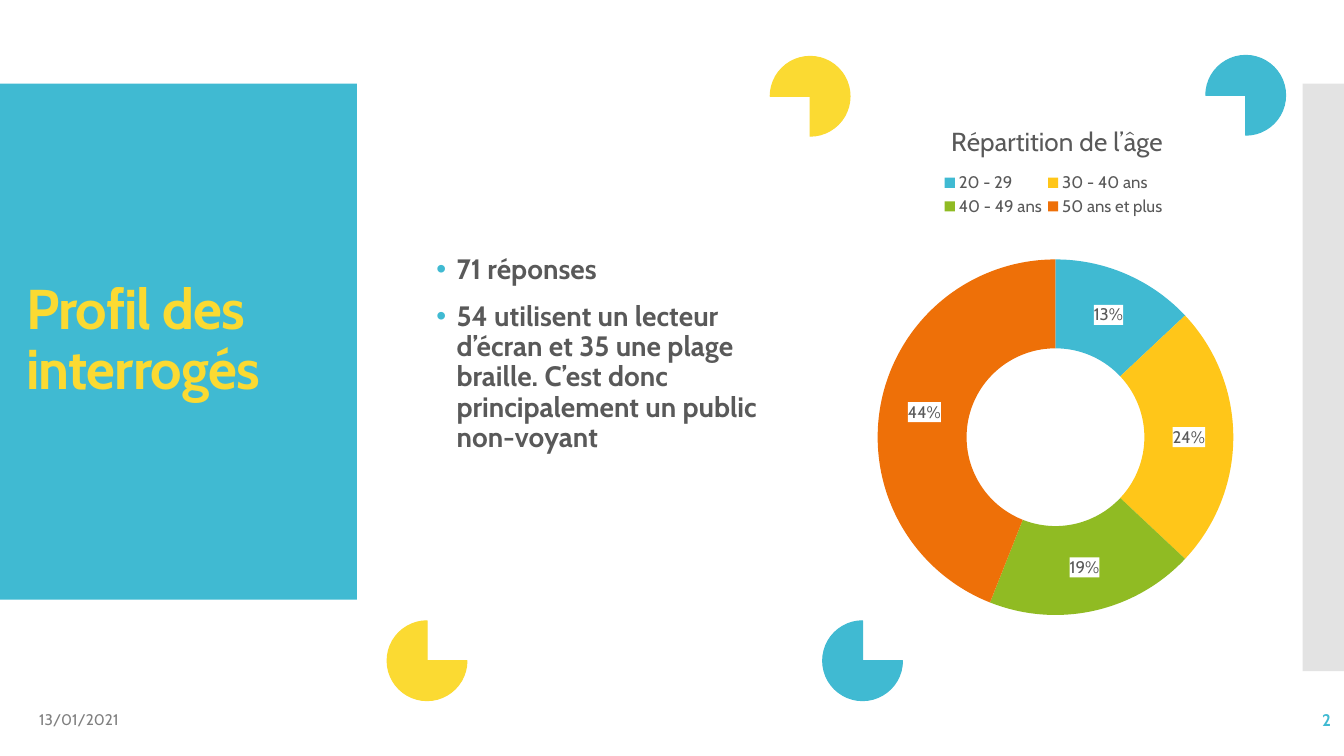
from lxml import etree
from pptx import Presentation
from pptx.chart.data import CategoryChartData
from pptx.dml.color import RGBColor
from pptx.enum.chart import XL_CHART_TYPE, XL_LEGEND_POSITION
from pptx.enum.shapes import MSO_SHAPE
from pptx.enum.text import MSO_ANCHOR, PP_ALIGN
from pptx.oxml import parse_xml
from pptx.oxml.ns import nsdecls, qn
from pptx.util import Inches, Pt

RECT = MSO_SHAPE.RECTANGLE
PIE = MSO_SHAPE.PIE
DOUGHNUT = XL_CHART_TYPE.DOUGHNUT
LEGEND_TOP = XL_LEGEND_POSITION.TOP
MIDDLE = MSO_ANCHOR.MIDDLE
LEFT = PP_ALIGN.LEFT
RIGHT = PP_ALIGN.RIGHT

FONT = "Cabin"
BLUE = "40BAD2"
YELLOW = "FBDA32"
GREY = "595959"
AGES = [
    ("20 - 29", 13, BLUE),
    ("30 - 40 ans", 24, "FFC619"),
    ("40 - 49 ans", 19, "90BB23"),
    ("50 ans et plus", 44, "EE7008"),
]


def rgb(value):
    return RGBColor.from_string(value)


def set_font(font, size, color, bold=False):
    font.name = FONT
    font.size = Pt(size)
    font.bold = bold
    font.color.rgb = rgb(color)


def add_block(s, kind, box, color, alpha=None):
    sp = s.shapes.add_shape(kind, *map(Inches, box))
    sp.shadow.inherit = False
    sp.fill.solid()
    sp.fill.fore_color.rgb = rgb(color)
    sp.line.fill.background()
    if alpha:
        clr = sp.fill._xPr.find(".//" + qn("a:srgbClr"))
        etree.SubElement(clr, qn("a:alpha")).set("val", str(alpha * 1000))
    return sp


def add_pie(s, x, y, color, rotation):
    sp = add_block(s, PIE, (x, y, 0.79, 0.79), color)
    sp.rotation = rotation
    sp.line.color.rgb = rgb(color)
    sp.line.width = Pt(0.85)


def add_text_frame(s, box):
    tf = s.shapes.add_textbox(*map(Inches, box)).text_frame
    tf.word_wrap = True
    tf.vertical_anchor = MIDDLE
    return tf


def add_run(p, text, size, color, bold=False):
    r = p.add_run()
    r.text = text
    set_font(r.font, size, color, bold)
    return r


def add_label(s, box, text, size, color, bold=False, align=LEFT):
    p = add_text_frame(s, box).paragraphs[0]
    p.alignment = align
    p.line_spacing = 0.9
    return add_run(p, text, size, color, bold)


def add_bullets(s, box, items):
    tf = add_text_frame(s, box)
    tf.margin_bottom = Inches(0.52)
    for i, text in enumerate(items):
        p = tf.add_paragraph() if i else tf.paragraphs[0]
        p.line_spacing = 0.9
        p.space_before = Pt(12)
        pPr = p._p.get_or_add_pPr()
        pPr.set("marL", str(Inches(0.2)))
        pPr.set("indent", str(-Inches(0.2)))
        clr = etree.SubElement(pPr, qn("a:buClr"))
        etree.SubElement(clr, qn("a:srgbClr")).set("val", BLUE)
        etree.SubElement(pPr, qn("a:buFont")).set("typeface", "Arial")
        etree.SubElement(pPr, qn("a:buChar")).set("char", "•")
        add_run(p, text, 20, GREY, True)


def set_layout(el, index, **values):
    for old in el.findall(qn("c:layout")):
        el.remove(old)
    layout = etree.Element(qn("c:layout"))
    manual = etree.SubElement(layout, qn("c:manualLayout"))
    if el.tag == qn("c:plotArea"):
        etree.SubElement(manual, qn("c:layoutTarget")).set("val", "inner")
    for axis in "xy":
        etree.SubElement(manual, qn(f"c:{axis}Mode")).set("val", "edge")
    for key, value in values.items():
        etree.SubElement(manual, qn(f"c:{key}")).set("val", str(value))
    el.insert(index, layout)


def add_age_chart(s, box):
    data = CategoryChartData()
    data.categories = [name for name, _, _ in AGES]
    data.add_series("Series 1", [value for _, value, _ in AGES])
    chart = s.shapes.add_chart(DOUGHNUT, *map(Inches, box), data).chart
    set_font(chart.font, 12, GREY)

    chart.has_title = True
    p = chart.chart_title.text_frame.paragraphs[0]
    add_run(p, "Répartition de l’âge", 18.6, GREY)
    set_layout(chart.chart_title._element, 1, x=0.22, y=0.04)

    chart.has_legend = True
    legend = chart.legend
    legend.position = LEGEND_TOP
    legend.include_in_layout = False
    set_font(legend.font, 12, GREY)
    set_layout(legend._element, 1, x=0.2, y=0.13, w=0.6, h=0.09)

    plot = chart.plots[0]
    plot.vary_by_categories = True
    plot_area = chart._chartSpace.find(".//" + qn("c:plotArea"))
    set_layout(plot_area, 0, x=0.04, y=0.29, w=0.93, h=0.63)
    for i, (_, _, color) in enumerate(AGES):
        fill = plot.series[0].points[i].format.fill
        fill.solid()
        fill.fore_color.rgb = rgb(color)

    labels = plot.series[0].data_labels
    labels.show_percentage = True
    labels.show_value = False
    labels.number_format = "0%"
    labels.number_format_is_linked = False
    set_font(labels.font, 12, GREY)
    white = parse_xml(
        f'<c:spPr {nsdecls("c", "a")}><a:solidFill>'
        '<a:srgbClr val="FFFFFF"/></a:solidFill></c:spPr>'
    )
    labels._element.find(qn("c:txPr")).addprevious(white)


def main():
    prs = Presentation()
    prs.slide_width = Inches(13.33)
    prs.slide_height = Inches(7.5)
    s = prs.slides.add_slide(prs.slide_layouts[6])

    add_block(s, RECT, (0, 0.83, 3.54, 5.12), BLUE)
    add_block(s, RECT, (12.92, 0.83, 0.41, 5.83), "C8C8C8", 50)
    for x, y, color, rotation in [
        (11.96, 0.55, BLUE, 180),
        (7.64, 0.56, YELLOW, 180),
        (3.84, 6.16, YELLOW, 0),
        (8.16, 6.16, BLUE, 0),
    ]:
        add_pie(s, x, y, color, rotation)

    title = add_label(s, (0.16, 0.87, 3.22, 5.03),
                      "Profil des interrogés", 40, YELLOW, True)
    title.font._element.set("spc", "-60")
    add_bullets(s, (4.23, 0.95, 3.8, 5.6), [
        "71 réponses",
        "54 utilisent un lecteur d’écran et 35 une plage braille. "
        "C’est donc principalement un public non-voyant",
    ])
    add_age_chart(s, (8.55, 0.95, 3.8, 5.6))
    add_label(s, (0.29, 6.95, 3, 0.4), "13/01/2021", 11, "808080")
    add_label(s, (11.63, 6.95, 1.67, 0.4), "2", 12, BLUE, True, RIGHT)
    prs.save("out.pptx")


if __name__ == "__main__":
    main()
